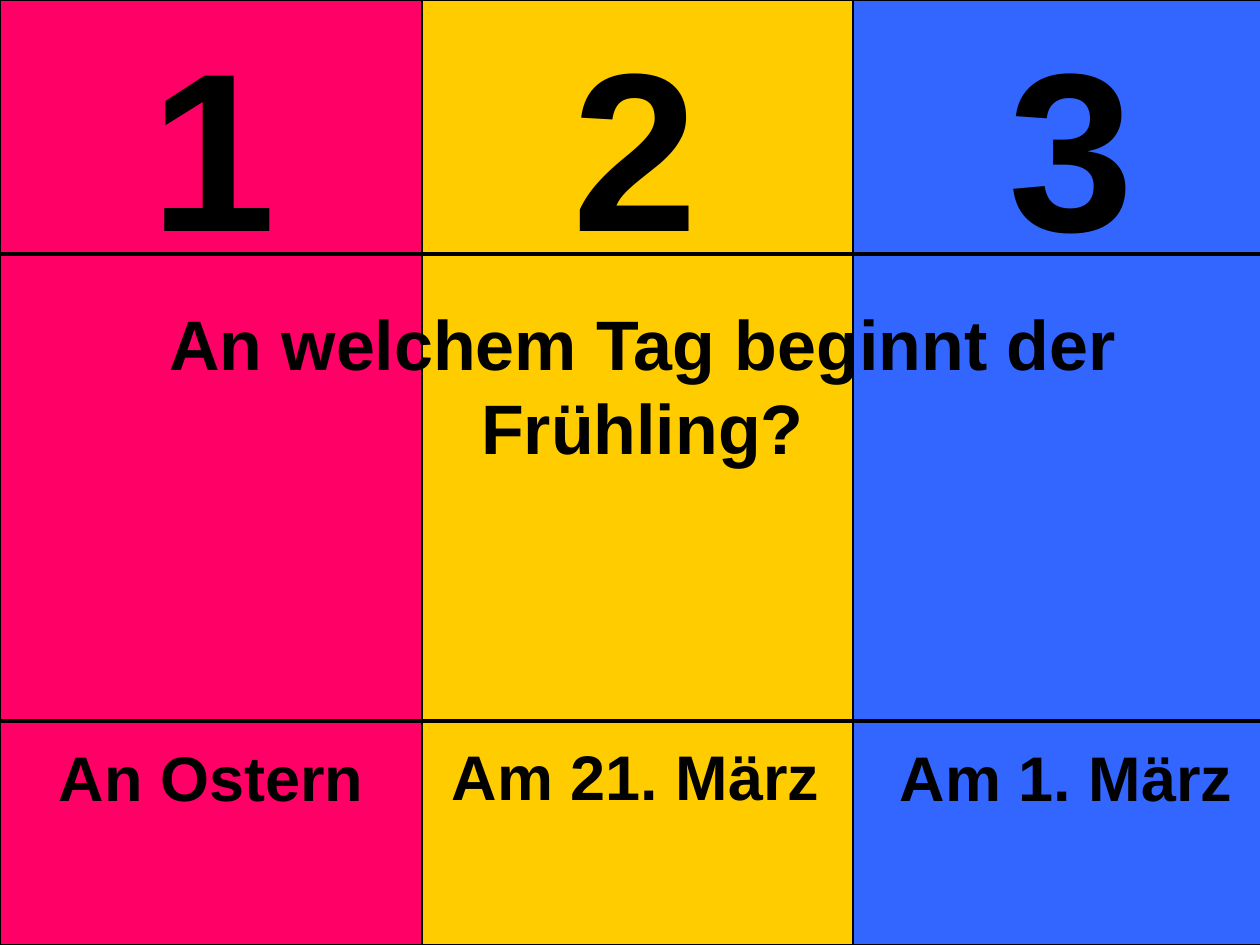
import pptx
import pptx.dml.color
import pptx.enum.shapes
import pptx.enum.text
import pptx.oxml.ns
import pptx.util
import lxml.etree

RGBColor = pptx.dml.color.RGBColor
PINK = RGBColor(0xFF, 0x00, 0x66)
YELLOW = RGBColor(0xFF, 0xCC, 0x00)
BLUE = RGBColor(0x33, 0x66, 0xFF)
BLACK = RGBColor(0x00, 0x00, 0x00)

PX_PER_INCH = 126
SLIDE_WIDTH, SLIDE_HEIGHT = 1260, 945
COLUMN_WIDTH = 431
FULL_WIDTH = 1285
DIGIT_HEIGHT, ANSWER_HEIGHT = 283, 88

COLUMNS = [
    (0, PINK, "1", (25, 377), "An Ostern", (0, 732, 422)),
    (422, YELLOW, "2", (422, 427), "Am 21. März", (422, 731, 427)),
    (853, BLUE, "3", (858, 427), "Am 1. März", (848, 732, 436)),
]


def emu(px):
    return pptx.util.Emu(round(px * 914400 / PX_PER_INCH))


def write_text(box, text, size, font="Arial", bold=True, color=BLACK):
    frame = box.text_frame
    frame.word_wrap = True
    frame.auto_size = pptx.enum.text.MSO_AUTO_SIZE.SHAPE_TO_FIT_TEXT
    frame.vertical_anchor = pptx.enum.text.MSO_ANCHOR.TOP
    para = frame.paragraphs[0]
    para.alignment = pptx.enum.text.PP_ALIGN.CENTER
    para.space_before = pptx.util.Pt(0)
    para.line_spacing = 1.0
    span = para.add_run()
    span.text = text
    span.font.name = font
    span.font.size = pptx.util.Pt(size)
    span.font.bold = bold
    span.font.color.rgb = color


class QuizSlide:
    def __init__(self, page, line_color=BLACK):
        self.page = page
        self.line_color = line_color

    def panel(self, left, top, width, height, fill):
        shape = self.page.shapes.add_shape(
            pptx.enum.shapes.MSO_SHAPE.RECTANGLE,
            emu(left), emu(top), emu(width), emu(height))
        shape.shadow.inherit = False
        shape.fill.solid()
        shape.fill.fore_color.rgb = fill
        shape.line.color.rgb = self.line_color
        shape.line.width = pptx.util.Pt(0.75)

    def label(self, left, top, width, height, text, size):
        box = self.page.shapes.add_textbox(
            emu(left), emu(top), emu(width), emu(height))
        write_text(box, text, size)

    def rule(self, top):
        line = self.page.shapes.add_connector(
            pptx.enum.shapes.MSO_CONNECTOR.STRAIGHT,
            emu(0), emu(top), emu(FULL_WIDTH), emu(top))
        line.line.color.rgb = self.line_color
        line.line.width = pptx.util.Pt(2.25)
        lxml.etree.SubElement(
            line.element.spPr, pptx.oxml.ns.qn("a:effectLst"))

    def question(self, left, top, width, height, text, size):
        title = self.page.shapes.title
        title.left, title.top = emu(left), emu(top)
        title.width, title.height = emu(width), emu(height)
        write_text(title, text, size)
        title.element.getparent().append(title.element)


def main():
    deck = pptx.Presentation()
    deck.slide_width = emu(SLIDE_WIDTH)
    deck.slide_height = emu(SLIDE_HEIGHT)
    quiz = QuizSlide(deck.slides.add_slide(deck.slide_layouts[5]))

    for left, fill, *_ in COLUMNS:
        quiz.panel(left, 0, COLUMN_WIDTH, SLIDE_HEIGHT, fill)
    for _, _, digit, (left, width), _, _ in COLUMNS:
        quiz.label(left, 0, width, DIGIT_HEIGHT, digit, 129)
    for *_, answer, (left, top, width) in COLUMNS:
        quiz.label(left, top, width, ANSWER_HEIGHT, answer, 36)
    for top in (254, 721):
        quiz.rule(top)
    quiz.question(0, 294, FULL_WIDTH, 180,
                  "An welchem Tag beginnt der Frühling?", 40)

    deck.save("out.pptx")


if __name__ == "__main__":
    main()
